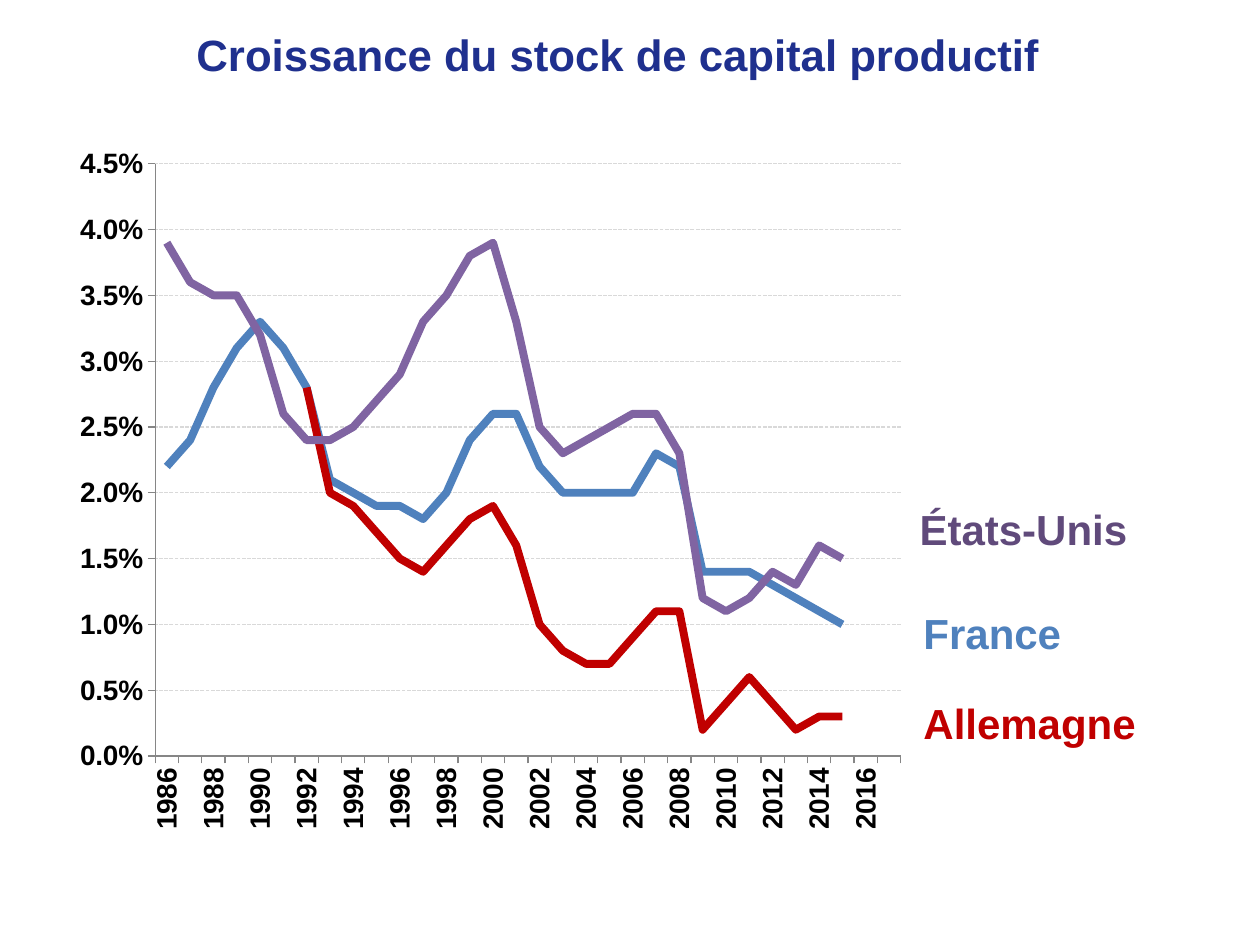
from pptx import Presentation
from pptx.chart.data import CategoryChartData
from pptx.dml.color import RGBColor
from pptx.enum.chart import XL_CHART_TYPE, XL_MARKER_STYLE, XL_TICK_MARK
from pptx.enum.dml import MSO_LINE
from pptx.enum.text import PP_ALIGN
from pptx.oxml import parse_xml
from pptx.oxml.ns import nsdecls, qn
from pptx.util import Pt

LINE = XL_CHART_TYPE.LINE
NO_MARKER = XL_MARKER_STYLE.NONE
OUTSIDE, NO_TICK = XL_TICK_MARK.OUTSIDE, XL_TICK_MARK.NONE
DASH = MSO_LINE.SQUARE_DOT
LEFT, CENTER = PP_ALIGN.LEFT, PP_ALIGN.CENTER

FONT = "Arial"
TITLE = "Croissance du stock de capital productif"
YEARS = range(1986, 2018)
# name, line colour, first year, growth in tenths of a percent
SERIES = [
    ("France", "4F81BD", 1986,
     [22, 24, 28, 31, 33, 31, 28, 21, 20, 19, 19, 18, 20, 24, 26,
      26, 22, 20, 20, 20, 20, 23, 22, 14, 14, 14, 13, 12, 11, 10]),
    ("Allemagne", "C00000", 1992,
     [28, 20, 19, 17, 15, 14, 16, 18, 19, 16, 10, 8,
      7, 7, 9, 11, 11, 2, 4, 6, 4, 2, 3, 3]),
    ("États-Unis", "8064A2", 1986,
     [39, 36, 35, 35, 32, 26, 24, 24, 25, 27, 29, 33, 35, 38, 39,
      33, 25, 23, 24, 25, 26, 26, 23, 12, 11, 12, 14, 13, 16, 15]),
]
# text, colour, left, top
LABELS = [
    ("États-Unis", "604A7B", 518.4, 284.4),
    ("France", "4F81BD", 520.6, 343.4),
    ("Allemagne", "C00000", 520.6, 395.3),
]
CHART_BOX = (36, 77, 488, 405.4)
PLOT_SHARE = {"x": 0.108, "y": 0.041, "w": 0.873, "h": 0.835}


def rgb(color):
    return RGBColor.from_string(color)


def style_font(font, size, color):
    font.name, font.size, font.bold = FONT, Pt(size), True
    font.color.rgb = rgb(color)


def style_line(line, color, width):
    line.color.rgb = rgb(color)
    line.width = Pt(width)


def add_text(page, text, place, size, color, align=LEFT):
    box = page.shapes.add_textbox(*map(Pt, place))
    frame = box.text_frame
    frame.word_wrap = True
    frame.text = text
    para = frame.paragraphs[0]
    para.alignment = align
    style_font(para.runs[0].font, size, color)
    return frame


def set_plot_layout(chart):
    """Fix the inner plot area as shares of the chart's size."""
    parts = "".join(f'<c:{mode}Mode val="edge"/>' for mode in "xy")
    parts += "".join(f'<c:{key} val="{share}"/>' for key, share in PLOT_SHARE.items())
    plot_area = chart._chartSpace.find(".//" + qn("c:plotArea"))
    for old in plot_area.findall(qn("c:layout")):
        plot_area.remove(old)
    plot_area.insert(0, parse_xml(
        f'<c:layout {nsdecls("c")}><c:manualLayout><c:layoutTarget val="inner"/>'
        f'{parts}</c:manualLayout></c:layout>'))


def style_axes(chart):
    years, growth = chart.category_axis, chart.value_axis
    for axis in (years, growth):
        axis.major_tick_mark, axis.minor_tick_mark = OUTSIDE, NO_TICK
        style_line(axis.format.line, "868686", 0.75)
        style_font(axis.tick_labels.font, 16, "000000")
    years.has_major_gridlines = False
    body = years._element.find(qn("c:txPr")).find(qn("a:bodyPr"))
    body.set("rot", "-5400000")
    body.set("vert", "horz")
    last = years._element.find(qn("c:noMultiLvlLbl"))
    for tag, step in (("tickLblSkip", 2), ("tickMarkSkip", 1)):
        last.addprevious(parse_xml(f'<c:{tag} {nsdecls("c")} val="{step}"/>'))

    growth.minimum_scale, growth.maximum_scale = 0, 0.045
    growth.major_unit = 0.005
    growth.tick_labels.number_format = "0.0%"
    growth.tick_labels.number_format_is_linked = False
    growth.has_major_gridlines = True
    grid = growth.major_gridlines.format.line
    style_line(grid, "D9D9D9", 0.75)
    grid.dash_style = DASH


def add_growth_chart(page):
    data = CategoryChartData(number_format="0.0%")
    data.categories = [str(year) for year in YEARS]
    for name, _, first, tenths in SERIES:
        known = {first + i: value / 1000 for i, value in enumerate(tenths)}
        data.add_series(name, [known.get(year) for year in YEARS])
    chart = page.shapes.add_chart(LINE, *map(Pt, CHART_BOX), data).chart
    chart.has_title = chart.has_legend = False
    style_font(chart.font, 16, "000000")
    chart.plots[0].vary_by_categories = False
    for series, (_, color, _, _) in zip(chart.plots[0].series, SERIES):
        series.smooth = False
        series.marker.style = NO_MARKER
        style_line(series.format.line, color, 4.5)
    style_axes(chart)
    set_plot_layout(chart)


deck = Presentation()
deck.slide_width, deck.slide_height = Pt(720), Pt(540)
page = deck.slides.add_slide(deck.slide_layouts[6])

title = add_text(page, TITLE, (25.2, 15.1, 662.4, 28), 25, "1F308E", CENTER)
title.margin_top, title.margin_bottom = Pt(1), Pt(0)
title.margin_right = Pt(14)
title.paragraphs[0].space_before = Pt(5)

add_growth_chart(page)
for text, color, left, top in LABELS:
    add_text(page, text, (left, top, 152, 36), 24, color)

deck.save("out.pptx")
